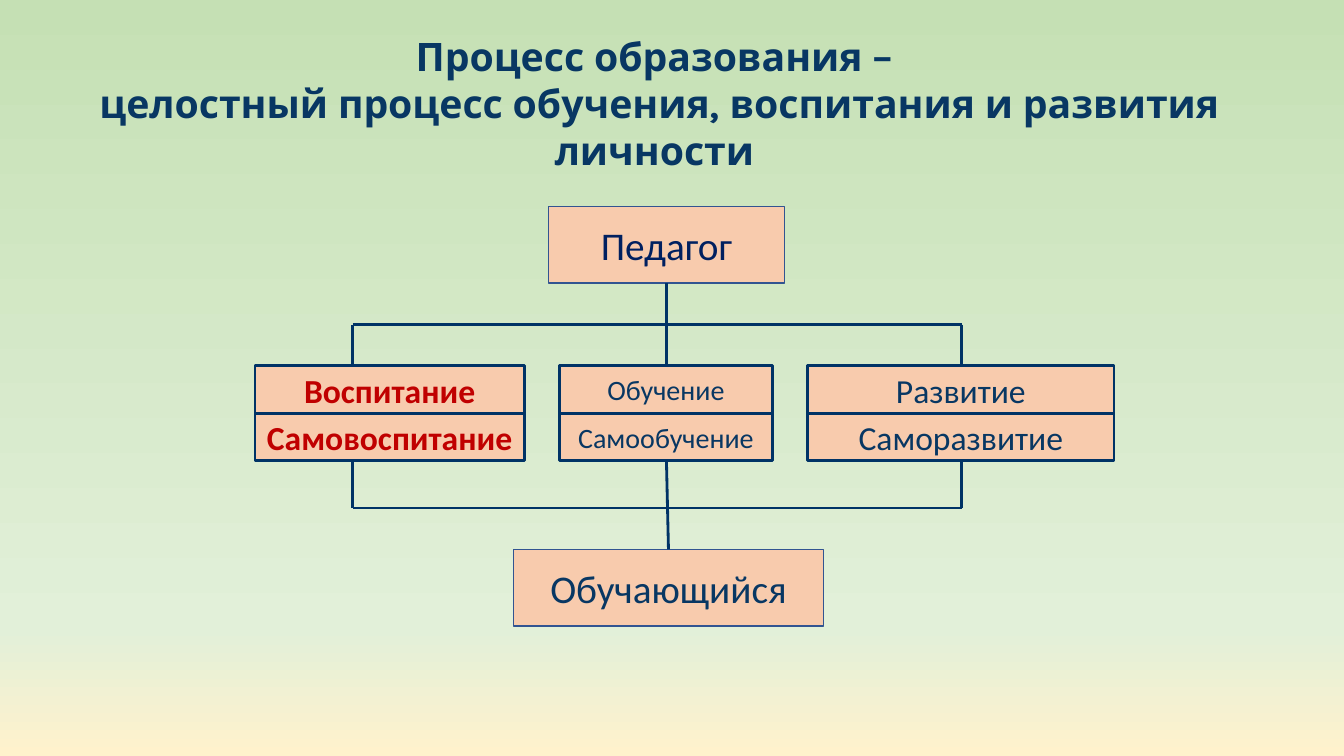
"""Builds a slide showing education as one process linking teacher and learner."""
from copy import deepcopy
from typing import NamedTuple

from lxml import etree
from pptx import Presentation
from pptx.dml.color import RGBColor
from pptx.enum import shapes, text
from pptx.oxml.ns import qn
from pptx.util import Inches, Pt

INK = RGBColor(0x08, 0x37, 0x63)
NAVY = RGBColor(0x00, 0x20, 0x60)
RED = RGBColor(0xC0, 0x00, 0x00)
PEACH = RGBColor(0xF8, 0xCB, 0xAD)
EDGE = RGBColor(0x32, 0x54, 0x91)
RULE = RGBColor(0x00, 0x33, 0x66)
SKY = [
    (0, RGBColor(0xC5, 0xE0, 0xB4)),
    (0.83, RGBColor(0xE2, 0xF0, 0xD9)),
    (1, RGBColor(0xFF, 0xF2, 0xCC)),
]


class Box(NamedTuple):
    label: str
    left: float
    top: float
    width: float
    height: float
    size: int
    color: RGBColor = INK
    bold: bool = False
    edge: RGBColor = EDGE
    weight: float = 1


class Pair(NamedTuple):
    labels: tuple[str, str]
    left: float
    width: float
    size: int
    color: RGBColor = INK
    bold: bool = False


class Link(NamedTuple):
    x1: float
    y1: float
    x2: float
    y2: float


ROW, TOP = 0.47, 3.63
BASE = TOP + 2 * ROW
LEFT, MID, RIGHT = 3.5, 6.61, 9.54
UPPER, LOWER = 3.22, 5.04
ENDS = [
    Box("Педагог", 5.44, 2.05, 2.34, 0.76, 28, NAVY),
    Box("Обучающийся", 5.09, 5.45, 3.08, 0.76, 28),
]
PAIRS = [
    Pair(("Воспитание", "Самовоспитание"), 2.53, 2.67, 24, RED, True),
    Pair(("Обучение", "Самообучение"), 5.55, 2.11, 20),
    Pair(("Развитие", "Саморазвитие"), 8.01, 3.04, 24),
]
LINKS = [
    *(Link(LEFT, y, RIGHT, y) for y in (UPPER, LOWER)),
    Link(MID, 2.81, MID, TOP),
    Link(MID, BASE, 6.63, 5.45),
    *(Link(x, y, x, end) for y, end in ((UPPER, TOP), (LOWER, BASE))
      for x in (LEFT, RIGHT)),
]


def style(frame, font: str, size: int, color: RGBColor, bold: bool) -> None:
    for para in frame.paragraphs:
        para.alignment = text.PP_ALIGN.CENTER
        for run in para.runs:
            run.font.name = font
            run.font.size = Pt(size)
            run.font.bold = bold
            run.font.color.rgb = color


def paint(slide) -> None:
    fill = slide.background.fill
    fill.gradient()
    fill.gradient_angle = 270
    stops = slide.element.find(".//" + qn("a:gsLst"))
    stops.append(deepcopy(stops[-1]))
    for stop, (place, color) in zip(fill.gradient_stops, SKY):
        stop.position = place
        stop.color.rgb = color


def head(slide) -> None:
    title = slide.shapes.title
    title.left, title.top = Inches(0.26), Inches(0.27)
    title.width, title.height = Inches(12.56), Inches(1.51)
    frame = title.text_frame
    frame.text = ("Процесс образования – \n"
                  "целостный процесс обучения, воспитания и развития личности ")
    frame.word_wrap = True
    frame.auto_size = text.MSO_AUTO_SIZE.SHAPE_TO_FIT_TEXT
    frame.vertical_anchor = text.MSO_ANCHOR.TOP
    style(frame, "Karla", 28, INK, True)


def draw(slide, box: Box) -> None:
    shape = slide.shapes.add_shape(
        shapes.MSO_SHAPE.RECTANGLE, Inches(box.left), Inches(box.top),
        Inches(box.width), Inches(box.height))
    shape.shadow.inherit = False
    shape.fill.solid()
    shape.fill.fore_color.rgb = PEACH
    shape.line.color.rgb = box.edge
    shape.line.width = Pt(box.weight)
    frame = shape.text_frame
    frame.text = box.label
    frame.vertical_anchor = text.MSO_ANCHOR.MIDDLE
    style(frame, "Calibri", box.size, box.color, box.bold)


def join(slide, link: Link) -> None:
    line = slide.shapes.add_connector(
        shapes.MSO_CONNECTOR.STRAIGHT, *(Inches(v) for v in link))
    line.line.color.rgb = RULE
    line.line.width = Pt(2)
    etree.SubElement(line.element.spPr, qn("a:effectLst"))


def main() -> None:
    deck = Presentation()
    deck.slide_width, deck.slide_height = Inches(13.33), Inches(7.5)
    slide = deck.slides.add_slide(deck.slide_layouts[5])
    paint(slide)
    head(slide)
    for box in ENDS:
        draw(slide, box)
    for pair in PAIRS:
        for row, label in enumerate(pair.labels):
            draw(slide, Box(label, pair.left, TOP + row * ROW, pair.width, ROW,
                            pair.size, pair.color, pair.bold, RULE, 2))
    for link in LINKS:
        join(slide, link)
    deck.save("out.pptx")


if __name__ == "__main__":
    main()
